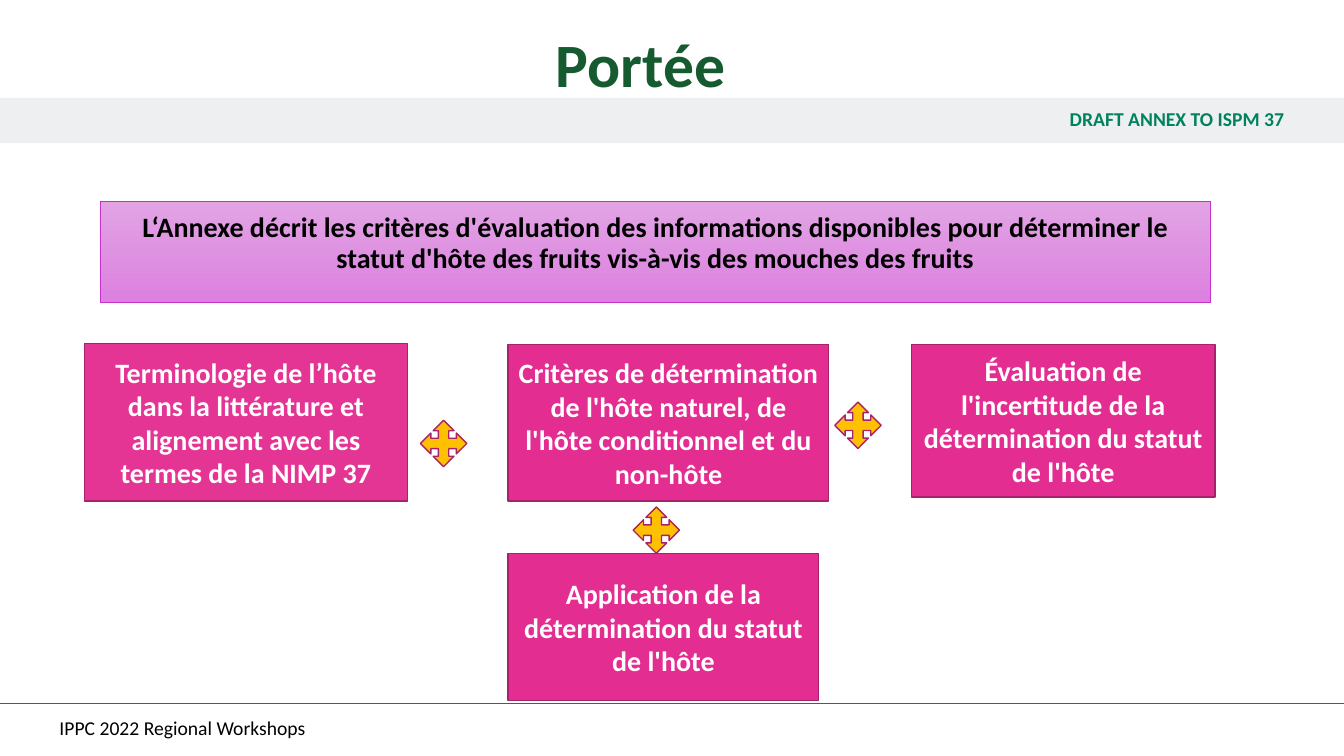
import math

from lxml import etree
from pptx import Presentation
from pptx.dml.color import RGBColor
from pptx.enum.shapes import MSO_CONNECTOR, MSO_SHAPE
from pptx.enum.text import MSO_ANCHOR, MSO_AUTO_SIZE, PP_ALIGN
from pptx.oxml.ns import qn
from pptx.util import Inches, Pt

LEFT, CENTER, RIGHT = PP_ALIGN.LEFT, PP_ALIGN.CENTER, PP_ALIGN.RIGHT
TOP, MIDDLE, BOTTOM = MSO_ANCHOR.TOP, MSO_ANCHOR.MIDDLE, MSO_ANCHOR.BOTTOM
WIDTH, HEIGHT = 13.33, 7.5
GREEN, PINK, PLUM, AMBER = "00825F", "E32D91", "A8216B", "FFC000"
color = RGBColor.from_string


def paint(shape, fill, line=None, opacity=100):
    shape.shadow.inherit = False
    shape.fill.solid()
    shape.fill.fore_color.rgb = color(fill)
    if opacity < 100:
        solid = shape.fill._xPr.find(qn("a:solidFill"))
        etree.SubElement(solid[0], qn("a:alpha"), val=str(opacity * 1000))
    if line:
        shape.line.color.rgb = color(line)
        shape.line.width = Pt(1)
    else:
        shape.line.fill.background()


def write(shape, text, size, ink, bold=True, align=CENTER, anchor=MIDDLE,
          spacing=1.0, inset_x=0.1, inset_y=0.05):
    frame = shape.text_frame
    frame.word_wrap = True
    frame.auto_size = MSO_AUTO_SIZE.NONE
    frame.vertical_anchor = anchor
    frame.margin_left = frame.margin_right = Inches(inset_x)
    frame.margin_top = frame.margin_bottom = Inches(inset_y)
    paragraph = frame.paragraphs[0]
    paragraph.alignment = align
    paragraph.line_spacing = spacing
    run = paragraph.add_run()
    run.text = text
    run.font.name = "Calibri"
    run.font.size = Pt(size)
    run.font.bold = bold
    run.font.color.rgb = color(ink)


presentation = Presentation()
presentation.slide_width, presentation.slide_height = Inches(WIDTH), Inches(HEIGHT)
slide = presentation.slides.add_slide(presentation.slide_layouts[0])
shapes = slide.shapes
subtitle = slide.placeholders[1].element
subtitle.getparent().remove(subtitle)

# Title
title = shapes.title
title.left, title.top, title.width, title.height = map(Inches, (2.21, -0.17, 8.29, 1.22))
write(title, "Portée", 44, "165A30", anchor=BOTTOM, spacing=0.9)

# Header band
band = shapes.add_shape(MSO_SHAPE.RECTANGLE, 0, Inches(0.97), Inches(WIDTH), Inches(0.45))
paint(band, "D8D9DC", opacity=42)
write(band, "DRAFT ANNEX TO ISPM 37", 14, GREEN, align=RIGHT, spacing=0.9, inset_x=0.59)

# Footer rule and text
rule = shapes.add_connector(MSO_CONNECTOR.STRAIGHT, 0, Inches(6.98), Inches(WIDTH), Inches(6.98))
rule.line.color.rgb = color(GREEN)
rule.line.width = Pt(1)
etree.SubElement(rule.element.spPr, qn("a:effectLst"))
footer = shapes.add_textbox(0, Inches(7.06), Inches(WIDTH), Inches(0.35))
write(footer, "IPPC 2022 Regional Workshops", 14, "000000", bold=False, align=LEFT,
      spacing=0.9, inset_x=0.59)

# Scope banner with elliptical corners
left, top, right, bottom = 1.38, 1.76, 11.84, 2.8
radius_x, radius_y = 0.32, 0.17
corners = [(right - radius_x, bottom - radius_y), (left + radius_x, bottom - radius_y),
           (left + radius_x, top + radius_y), (right - radius_x, top + radius_y)]
outline = []
for quarter, (center_x, center_y) in enumerate(corners):
    for step in range(0, 91, 6):
        angle = math.radians(90 * quarter + step)
        outline.append((center_x + radius_x * math.cos(angle),
                        center_y + radius_y * math.sin(angle)))
builder = shapes.build_freeform(*outline[0], scale=Inches(1))
builder.add_line_segments(outline[1:], close=True)
banner = builder.convert_to_shape()
paint(banner, "E2A3E5", "C830CC")
banner.line.width = Pt(0.5)
banner.fill.gradient()
banner.fill.gradient_angle = 270
for stop, tint in zip(banner.fill.gradient_stops, ("E2A3E5", "DC81DF")):
    stop.color.rgb = color(tint)
write(banner, "L‘Annexe décrit les critères d'évaluation des informations disponibles "
      "pour déterminer le statut d'hôte des fruits vis-à-vis des mouches des fruits",
      20, "000000", anchor=TOP, spacing=0.9, inset_x=0.12, inset_y=0.12)

# Topic boxes: left, top, width, height, opacity, text
topics = [
    (0.84, 3.41, 3.2, 1.56, 96, "Terminologie de l’hôte dans la littérature et "
     "alignement avec les termes de la NIMP 37"),
    (5.04, 3.42, 3.18, 1.55, 100, "Critères de détermination de l'hôte naturel, "
     "de l'hôte conditionnel et du non-hôte"),
    (9.04, 3.42, 3.01, 1.51, 100, "Évaluation de l'incertitude de la détermination "
     "du statut de l'hôte"),
    (5.04, 5.49, 3.08, 1.46, 100, "Application de la détermination du statut de l'hôte"),
]
for *place, opacity, text in topics:
    box = shapes.add_shape(MSO_SHAPE.RECTANGLE, *map(Inches, place))
    paint(box, PINK, PLUM, opacity)
    write(box, text, 20, "FFFFFF")

# Four-way arrows between the boxes
for x, y in [(4.17, 4.17), (8.28, 3.99), (6.28, 5.03)]:
    arrow = shapes.add_shape(MSO_SHAPE.QUAD_ARROW, Inches(x), Inches(y), Inches(0.46), Inches(0.46))
    paint(arrow, AMBER, PLUM)

presentation.save("out.pptx")
